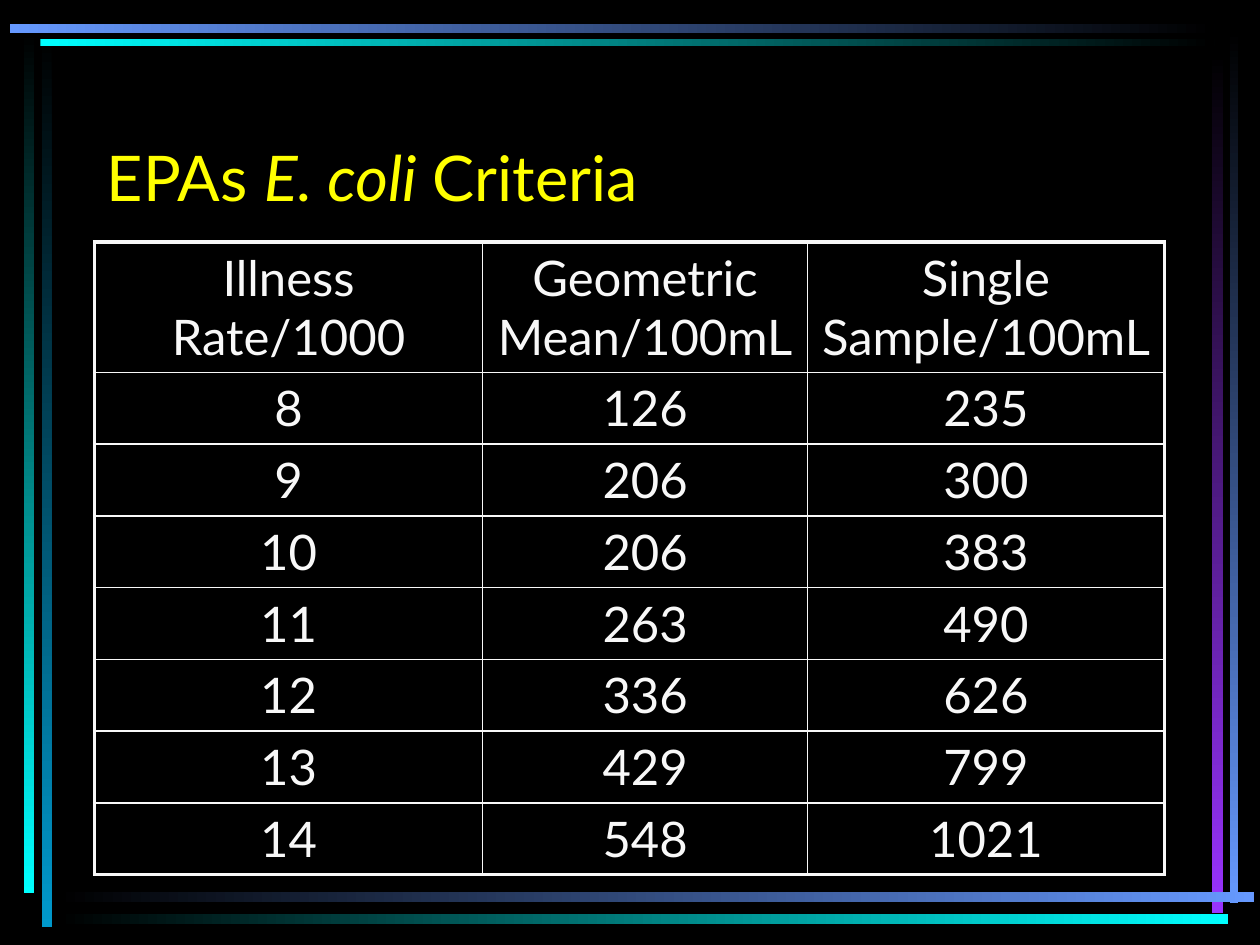
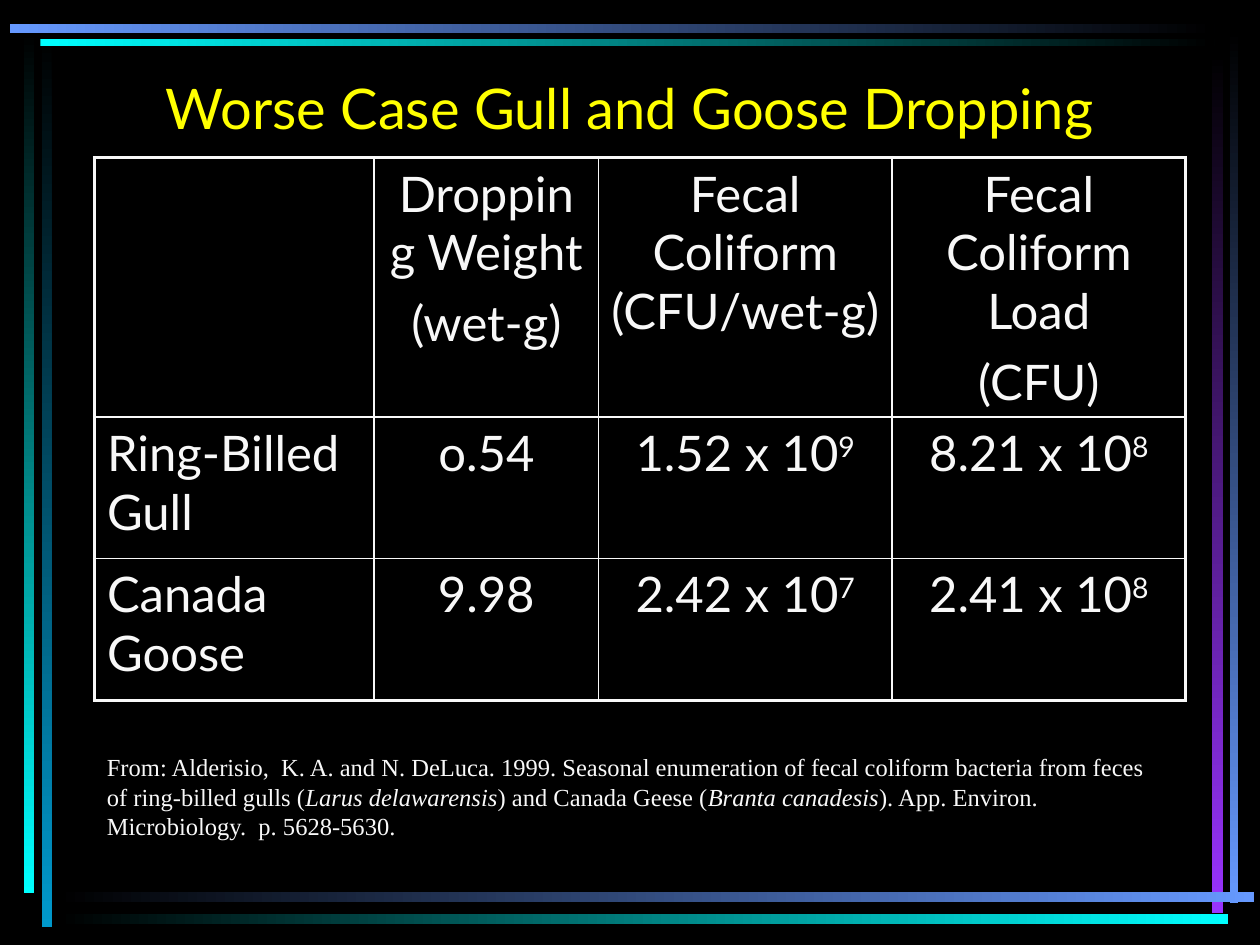
from dataclasses import dataclass
from lxml.etree import SubElement as Sub
from pptx import Presentation
from pptx.dml.color import RGBColor as RGB
from pptx.enum.shapes import MSO_SHAPE as Shape
from pptx.enum.text import MSO_ANCHOR as Anchor, PP_ALIGN as Align
from pptx.oxml.ns import qn
from pptx.util import Inches, Pt


@dataclass(frozen=True)
class Theme:
    back: str = "000000"
    ink: str = "F8F8F8"
    head: str = "FFFF00"
    sky: str = "6699FF"
    aqua: str = "00FFFF"
    teal: str = "0099CC"
    plum: str = "9933FF"
    sans: str = "Lato"
    serif: str = "Times New Roman"
    body: int = 28
    note: int = 14
    gap: float = 6.7
    thin: float = 1
    thick: float = 2.25


T = Theme()

BARS = [
    ((0.33, 0.28, 0.08, 7.08), T.back, T.teal),
    ((0.19, 0.25, 0.08, 6.84), T.back, T.aqua),
    ((9.76, 0.24, 0.07, 6.93), T.back, T.sky),
    ((9.62, 0.42, 0.09, 6.83), T.back, T.plum),
    ((0.45, 7.08, 9.5, 0.08), T.back, T.sky),
    ((0.45, 7.25, 9.3, 0.08), T.back, T.aqua),
    ((0.32, 0.31, 9.32, 0.06), T.aqua, T.back),
    ((0.08, 0.19, 9.56, 0.07), T.sky, T.back),
]

# In all texts, "|" switches the marked style on and off.
PAGES = [
    {
        "title": "EPAs |E. coli| Criteria",
        "box": (0.75, 0.67, 8.5, 1.08), "size": 36, "align": Align.LEFT,
        "top": 1.92, "cols": [3.08, 2.58, 2.83], "rows": [1.03] + [0.57] * 7,
        "names": False,
        "cells": [
            ("Illness Rate/1000", "Geometric Mean/100mL",
             "Single Sample/100mL"),
            ("8", "126", "235"),
            ("9", "206", "300"),
            ("10", "206", "383"),
            ("11", "263", "490"),
            ("12", "336", "626"),
            ("13", "429", "799"),
            ("14", "548", "1021"),
        ],
    },
    {
        "title": "Worse Case Gull and Goose Dropping",
        "box": (0.75, 0.67, 8.5, 0.5), "size": 32, "align": Align.CENTER,
        "top": 1.25, "cols": [2.22, 1.78, 2.33, 2.33],
        "rows": [2.05, 1.12, 1.13], "names": True,
        "cells": [
            ("", "Dropping Weight \n(wet-g)", "Fecal Coliform (CFU/wet-g)",
             "Fecal Coliform Load\n(CFU)"),
            ("Ring-Billed Gull", "o.54", "1.52 x 10|9", "8.21 x 10|8"),
            ("Canada Goose", "9.98", "2.42 x 10|7", "2.41 x 10|8"),
        ],
        "note": "From: Alderisio,  K. A. and N. DeLuca. 1999. Seasonal "
                "enumeration of fecal coliform bacteria from feces of "
                "ring-billed gulls (|Larus delawarensis|) and Canada Geese "
                "(|Branta canadesis|). App. Environ. Microbiology.  "
                "p. 5628-5630.",
    },
]
NOTE = (0.75, 5.92, 8.5, 0.8)


def place(box):
    return [Inches(n) for n in box]


def write(par, text, size, hue=T.ink, face=T.sans, sup=False):
    for i, part in enumerate(text.split("|")):
        run = par.add_run()
        run.text = part
        font = run.font
        font.size, font.name = Pt(size), face
        font.color.rgb = RGB.from_string(hue)
        if i % 2 and sup:
            font._element.set("baseline", "30000")
        elif i % 2:
            font.italic = True


def label(slide, box, text, size, align=Align.LEFT, anchor=Anchor.TOP, **look):
    frame = slide.shapes.add_textbox(*place(box)).text_frame
    frame.word_wrap = True
    frame.vertical_anchor = anchor
    par = frame.paragraphs[0]
    par.alignment = align
    write(par, text, size, **look)


def frame_bars(slide, layout):
    for box, start, end in BARS:
        bar = slide.shapes.add_shape(Shape.RECTANGLE, *place(box))
        bar.shadow.inherit = False
        bar.line.fill.background()
        bar.fill.gradient()
        bar.fill.gradient_angle = 0 if box[2] > box[3] else 270
        for stop, hue in zip(bar.fill.gradient_stops, (start, end)):
            stop.color.rgb = RGB.from_string(hue)
        layout.shapes.element.append(bar.element)


def edge(cell, outer):
    props = cell._tc.get_or_add_tcPr()
    for side, far in zip("LRTB", outer):
        wide = T.thick if far else T.thin
        line = Sub(props, qn(f"a:ln{side}"), w=str(Pt(wide)))
        fill = Sub(line, qn("a:solidFill"))
        Sub(fill, qn("a:srgbClr"), val=T.ink)
    cell.fill.background()


def grid(slide, page):
    cols, rows = page["cols"], page["rows"]
    box = (0.75, page["top"], sum(cols), sum(rows))
    table = slide.shapes.add_table(len(rows), len(cols), *place(box)).table
    table.first_row = table.horz_banding = False
    for col, wide in zip(table.columns, cols):
        col.width = Inches(wide)
    for row, tall in zip(table.rows, rows):
        row.height = Inches(tall)
    for r, line in enumerate(page["cells"]):
        for c, text in enumerate(line):
            cell = table.cell(r, c)
            edge(cell, (c == 0, c == len(cols) - 1,
                        r == 0, r == len(rows) - 1))
            left = page["names"] and c == 0
            for i, part in enumerate(text.split("\n") if text else []):
                frame = cell.text_frame
                par = frame.add_paragraph() if i else frame.paragraphs[0]
                par.alignment = Align.LEFT if left else Align.CENTER
                if i:
                    par.space_before = Pt(T.gap)
                write(par, part, T.body, sup=True)


def main():
    deck = Presentation()
    deck.slide_width, deck.slide_height = Inches(10), Inches(7.5)
    layout = deck.slide_layouts[6]
    fill = layout.background.fill
    fill.solid()
    fill.fore_color.rgb = RGB.from_string(T.back)
    for i, page in enumerate(PAGES):
        slide = deck.slides.add_slide(layout)
        if i == 0:
            frame_bars(slide, layout)
        label(slide, page["box"], page["title"], page["size"],
              page["align"], Anchor.BOTTOM, hue=T.head)
        grid(slide, page)
        if "note" in page:
            label(slide, NOTE, page["note"], T.note, face=T.serif)
    deck.save("out.pptx")


if __name__ == "__main__":
    main()
